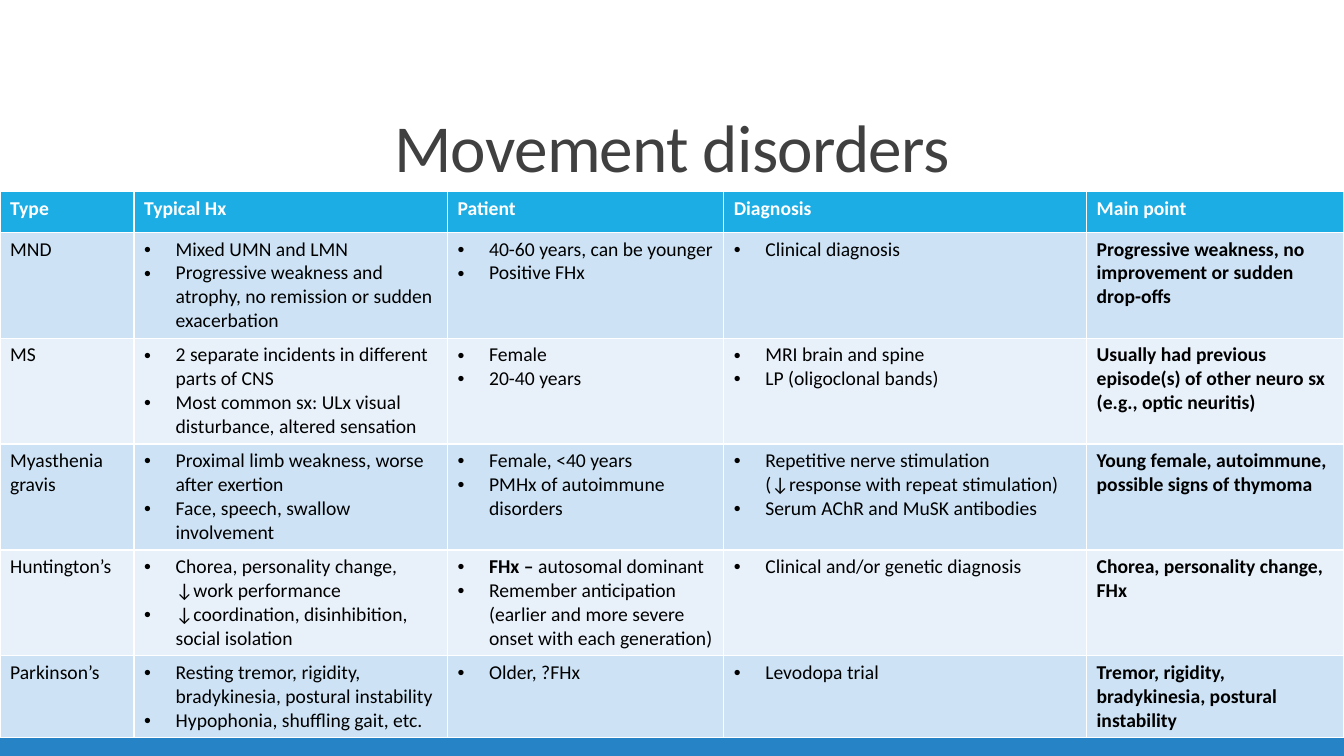
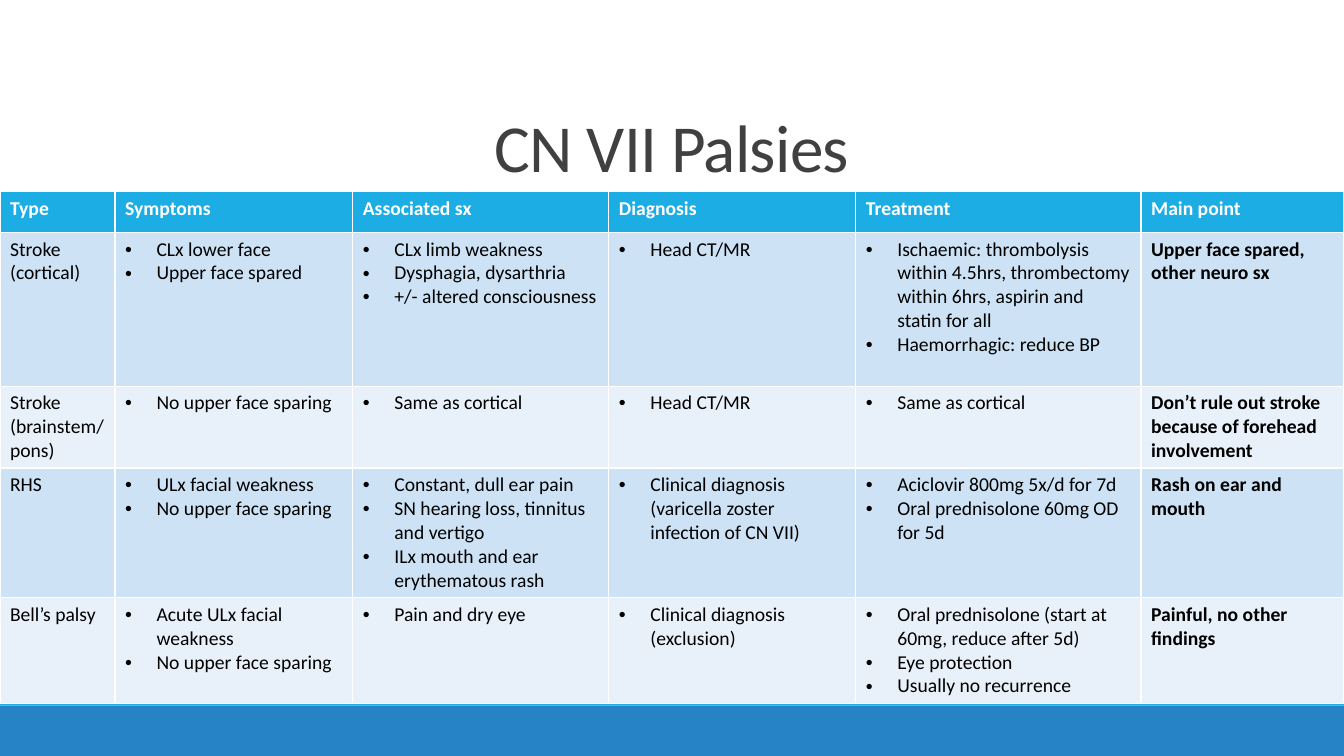
"""Build two neurology summary slides, each a title above a full-width table."""
from dataclasses import dataclass

from lxml import etree
from pptx import Presentation
from pptx.dml.color import RGBColor
from pptx.enum.shapes import MSO_CONNECTOR, MSO_SHAPE
from pptx.enum.text import MSO_ANCHOR, PP_ALIGN
from pptx.oxml.ns import qn
from pptx.util import Pt

RECT = MSO_SHAPE.RECTANGLE
LINE = MSO_CONNECTOR.STRAIGHT
BOTTOM = MSO_ANCHOR.BOTTOM
CENTER = PP_ALIGN.CENTER
WIDE, HIGH = 960, 540


@dataclass(frozen=True)
class Theme:
    """Colours, type sizes and spacing that the slides share."""

    font: str = "Calibri"
    title: str = "404040"
    rule: str = "808080"
    band: str = "2683C6"
    accent: str = "1CADE4"
    white: str = "FFFFFF"
    black: str = "000000"
    rows: tuple = ("CDE3F5", "E8F1FA")
    head: float = 48
    body: float = 14
    line: float = 17.1
    pad: float = 7.2
    indent: float = 22.5


THEME = Theme()

MOVES = {
    "title": "Movement disorders",
    "cols": (95.8, 223.9, 197.3, 259.2, 183.8),
    "lines": (4, 4, 4, 4, 3),
    "head": ("Type", "Typical Hx", "Patient", "Diagnosis", "Main point"),
    "rows": (
        ("MND",
         ["Mixed UMN and LMN",
          "Progressive weakness and atrophy, no remission or sudden exacerbation"],
         ["40-60 years, can be younger", "Positive FHx"],
         ["Clinical diagnosis"],
         "Progressive weakness, no improvement or sudden drop-offs"),
        ("MS",
         ["2 separate incidents in different parts of CNS",
          "Most common sx: ULx visual disturbance, altered sensation"],
         ["Female", "20-40 years"],
         ["MRI brain and spine", "LP (oligoclonal bands)"],
         "Usually had previous episode(s) of other neuro sx (e.g., optic neuritis)"),
        ("Myasthenia gravis",
         ["Proximal limb weakness, worse after exertion",
          "Face, speech, swallow involvement"],
         ["Female, <40 years", "PMHx of autoimmune disorders"],
         ["Repetitive nerve stimulation (↓response with repeat stimulation)",
          "Serum AChR and MuSK antibodies"],
         "Young female, autoimmune, possible signs of thymoma"),
        ("Huntington’s",
         ["Chorea, personality change, ↓work performance",
          "↓coordination, disinhibition, social isolation"],
         [("FHx – ", "autosomal dominant"),
          "Remember anticipation (earlier and more severe onset with each generation)"],
         ["Clinical and/or genetic diagnosis"],
         "Chorea, personality change, FHx"),
        ("Parkinson’s",
         ["Resting tremor, rigidity, bradykinesia, postural instability",
          "Hypophonia, shuffling gait, etc."],
         ["Older, ?FHx"],
         ["Levodopa trial"],
         "Tremor, rigidity, bradykinesia, postural instability"),
    ),
}

PALSIES = {
    "title": "CN VII Palsies",
    "cols": (82.1, 169.9, 182.9, 176.4, 203.8, 144.9),
    "lines": (6, 3, 5, 4),
    "head": ("Type", "Symptoms", "Associated sx", "Diagnosis", "Treatment",
             "Main point"),
    "rows": (
        ("Stroke (cortical)",
         ["CLx lower face", "Upper face spared"],
         ["CLx limb weakness", "Dysphagia, dysarthria",
          "+/- altered consciousness"],
         ["Head CT/MR"],
         ["Ischaemic: thrombolysis within 4.5hrs, thrombectomy within 6hrs, "
          "aspirin and statin for all",
          "Haemorrhagic: reduce BP"],
         "Upper face spared, other neuro sx"),
        ("Stroke (brainstem/pons)",
         ["No upper face sparing"],
         ["Same as cortical"],
         ["Head CT/MR"],
         ["Same as cortical"],
         "Don’t rule out stroke because of forehead involvement"),
        ("RHS",
         ["ULx facial weakness", "No upper face sparing"],
         ["Constant, dull ear pain", "SN hearing loss, tinnitus and vertigo",
          "ILx mouth and ear erythematous rash"],
         ["Clinical diagnosis (varicella zoster infection of CN VII)"],
         ["Aciclovir 800mg 5x/d for 7d", "Oral prednisolone 60mg OD for 5d"],
         "Rash on ear and mouth"),
        ("Bell’s palsy",
         ["Acute ULx facial weakness", "No upper face sparing"],
         ["Pain and dry eye"],
         ["Clinical diagnosis (exclusion)"],
         ["Oral prednisolone (start at 60mg, reduce after 5d)",
          "Eye protection", "Usually no recurrence"],
         "Painful, no other findings"),
    ),
}


def paint(fill, color):
    """Give a fill one solid colour."""
    fill.solid()
    fill.fore_color.rgb = RGBColor.from_string(color)


def style(para, size, color, bold=False):
    """Set the font of a whole paragraph."""
    font = para.font
    font.name, font.size, font.bold = THEME.font, Pt(size), bold
    font.color.rgb = RGBColor.from_string(color)


def add_band(shapes, box, color):
    """Add a plain full-colour strip."""
    band = shapes.add_shape(RECT, *map(Pt, box))
    band.shadow.inherit = False
    paint(band.fill, color)
    band.line.fill.background()
    return band


def add_rule(shapes, left, right, top):
    """Add the thin line below the title."""
    rule = shapes.add_connector(LINE, Pt(left), Pt(top), Pt(right), Pt(top))
    rule.line.width = Pt(0.5)
    rule.line.color.rgb = RGBColor.from_string(THEME.rule)
    etree.SubElement(rule.element.spPr, qn("a:effectLst"))
    return rule


def dress(layout, slide):
    """Draw the shared bands and rule, then move them to the layout."""
    shapes = slide.shapes
    parts = (
        add_band(shapes, (0, HIGH - 36, WIDE, 36), THEME.band),
        add_band(shapes, (0, HIGH - 41, WIDE, 5), THEME.accent),
        add_rule(shapes, 94.3, 879.1, 136.8),
    )
    for part in parts:
        layout.shapes.element.append(part.element)


def set_title(slide, text, box):
    """Place and format the title in the box."""
    title = slide.shapes.title
    title.left, title.top, title.width, title.height = map(Pt, box)
    frame = title.text_frame
    frame.vertical_anchor = BOTTOM
    para = frame.paragraphs[0]
    para.alignment, para.line_spacing = CENTER, 0.85
    run = para.add_run()
    run.text = text
    run.font._element.set("spc", "-50")
    style(para, THEME.head, THEME.title)


def add_dot(para):
    """Turn a paragraph into a bullet with a hanging indent."""
    props = para._p.get_or_add_pPr()
    props.set("marL", str(Pt(THEME.indent)))
    props.set("indent", str(-Pt(THEME.indent)))
    etree.SubElement(props, qn("a:buFont")).set("typeface", "Arial")
    etree.SubElement(props, qn("a:buChar")).set("char", "•")


def fill_cell(cell, item, back, color, bold):
    """Write a plain text or a list of bullets into a cell."""
    paint(cell.fill, back)
    frame = cell.text_frame
    dots = isinstance(item, list)
    for num, text in enumerate(item if dots else [item]):
        para = frame.add_paragraph() if num else frame.paragraphs[0]
        if dots:
            add_dot(para)
        style(para, THEME.body, color, bold)
        if isinstance(text, tuple):
            lead, text = text
            run = para.add_run()
            run.text, run.font.bold = lead, True
        para.add_run().text = text


def add_grid(slide, data, left, top):
    """Add the table, with row heights from the lines they hold."""
    cols = data["cols"]
    highs = [29.2] + [n * THEME.line + THEME.pad for n in data["lines"]]
    grid = slide.shapes.add_table(
        len(highs), len(cols), Pt(left), Pt(top), Pt(sum(cols)), Pt(sum(highs))
    ).table
    for col, width in zip(grid.columns, cols):
        col.width = Pt(width)
    for row, high in zip(grid.rows, highs):
        row.height = Pt(high)
    for cell, text in zip(grid.rows[0].cells, data["head"]):
        fill_cell(cell, text, THEME.accent, THEME.white, True)
    last = len(cols) - 1
    for num, items in enumerate(data["rows"]):
        back = THEME.rows[num % 2]
        for pos, item in enumerate(items):
            fill_cell(grid.cell(num + 1, pos), item, back, THEME.black, pos == last)


def main():
    """Build and save the slides."""
    deck = Presentation()
    deck.slide_width, deck.slide_height = Pt(WIDE), Pt(HIGH)
    layout = deck.slide_layouts[5]
    for num, data in enumerate((MOVES, PALSIES)):
        slide = deck.slides.add_slide(layout)
        if num == 0:
            dress(layout, slide)
        set_title(slide, data["title"], (128.2, 22.3, 703.4, 114.5))
        add_grid(slide, data, 0, 136.8)
    deck.save("out.pptx")


if __name__ == "__main__":
    main()
